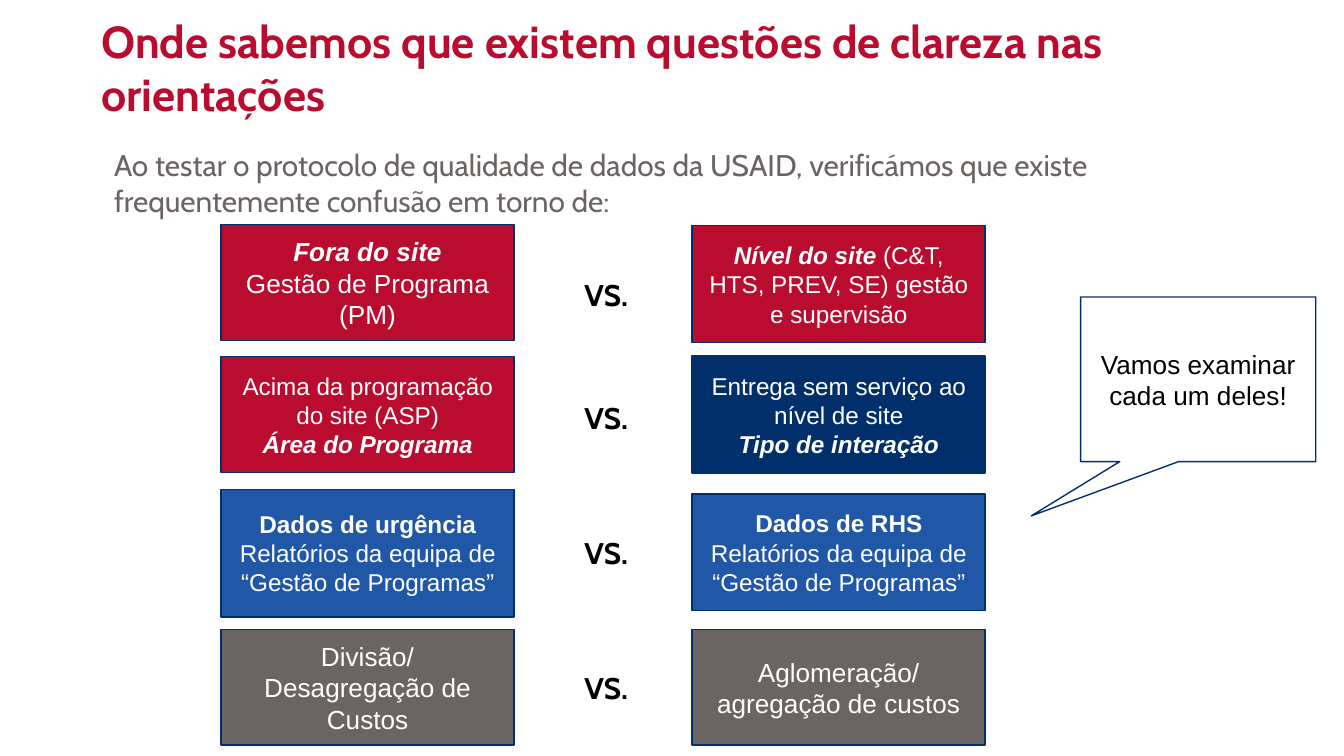
import pptx
import pptx.dml.color
import pptx.enum.shapes
import pptx.enum.text
import pptx.util

SCALE = 4572  # EMU per px, 200 px to the inch
COLORS = {
    "red": "BA0C2F",
    "navy": "002F6C",
    "blue": "2057A7",
    "gray": "6C6463",
    "white": "FFFFFF",
    "black": "000000",
}
SHAPES = pptx.enum.shapes.MSO_SHAPE
ALIGN = pptx.enum.text.PP_ALIGN
ANCHOR = pptx.enum.text.MSO_ANCHOR
BREAK = ("\n", "")

LEFT_X, VERSUS_X, RIGHT_X, BOX_WIDTH = 329, 850, 1030, 436

# Each box: top, height, fill, text size, paragraphs of (text, style) runs
LEFT_BOXES = [
    (334, 173, "red", 14, [[("Fora do site", "bi"), BREAK,
                            ("Gestão de Programa (PM)", "")]]),
    (531, 172, "red", 13, [[("Acima da programação do site (ASP)", ""), BREAK,
                            ("Área do Programa", "bi")]]),
    (728, 190, "blue", 13, [[("Dados de urgência ", "b"),
                             ("Relatórios da equipa de “Gestão de Programas”", "")]]),
    (937, 172, "gray", 14, [[("Divisão/ Desagregação de Custos", "")]]),
]
RIGHT_BOXES = [
    (336, 174, "red", 13, [[("Nível do site ", "bi"),
                            ("(C&T, HTS, PREV, SE) gestão e supervisão", "")]]),
    (530, 174, "navy", 13, [[("Entrega sem serviço ao nível de site", "")],
                            [("Tipo de interação", "bi")]]),
    (735, 174, "blue", 13, [[("Dados de RHS ", "b"),
                             ("Relatórios da equipa de “Gestão de Programas”", "")]]),
    (937, 172, "gray", 14, [[("Aglomeração/", ""), BREAK,
                             ("agregação de custos", "")]]),
]
VERSUS_TOPS = [392, 575, 776, 976]


def px(length):
    return pptx.util.Emu(length * SCALE)


def rgb(name):
    return pptx.dml.color.RGBColor.from_string(COLORS[name])


def write_text(box, paragraphs, size, font, color, align=ALIGN.LEFT, anchor=ANCHOR.TOP):
    frame = box.text_frame
    frame.auto_size = pptx.enum.text.MSO_AUTO_SIZE.NONE
    frame.word_wrap = True
    frame.vertical_anchor = anchor
    frame.margin_left = frame.margin_right = px(20)
    frame.margin_top = frame.margin_bottom = px(20)
    for index, runs in enumerate(paragraphs):
        para = frame.add_paragraph() if index else frame.paragraphs[0]
        para.alignment = align
        for text, style in runs:
            if text == "\n":
                para.add_line_break()
                continue
            span = para.add_run()
            span.text = text
            span.font.name = font
            span.font.size = pptx.util.Pt(size)
            span.font.bold = "b" in style
            span.font.italic = "i" in style
            span.font.color.rgb = rgb(color)


def add_title(page, text):
    title = page.shapes.title
    title.left, title.top, title.width, title.height = map(px, (131, 100, 1766, 100))
    write_text(title, [[(text, "b")]], 24, "Cabin", "red", anchor=ANCHOR.BOTTOM)


def add_label(page, place, text, style, color):
    box = page.shapes.add_textbox(*map(px, place))
    write_text(box, [[(text, style)]], 16, "Cabin", color)
    return box


def add_box(page, kind, place, fill, paragraphs, size, color):
    box = page.shapes.add_shape(kind, *map(px, place))
    box.shadow.inherit = False
    box.fill.solid()
    box.fill.fore_color.rgb = rgb(fill)
    box.line.color.rgb = rgb("navy")
    box.line.width = pptx.util.Pt(0.75)
    write_text(box, paragraphs, size, "Arial", color, ALIGN.CENTER, ANCHOR.MIDDLE)
    return box


def main():
    deck = pptx.Presentation()
    deck.slide_width, deck.slide_height = px(2000), px(1125)
    page = deck.slides.add_slide(deck.slide_layouts[5])

    # Heading and introduction
    add_title(page, "Onde sabemos que existem questões de clareza nas orientações")
    intro = add_label(page, (150, 198, 1658, 100),
                      "Ao testar o protocolo de qualidade de dados da USAID, "
                      "verificámos que existe frequentemente confusão em torno de:",
                      "", "gray")
    intro.text_frame.paragraphs[0].space_after = pptx.util.Pt(8)

    # Compared pairs
    for left, boxes in ((LEFT_X, LEFT_BOXES), (RIGHT_X, RIGHT_BOXES)):
        for top, height, fill, size, paragraphs in boxes:
            add_box(page, SHAPES.RECTANGLE, (left, top, BOX_WIDTH, height),
                    fill, paragraphs, size, "white")
    for top in VERSUS_TOPS:
        add_label(page, (VERSUS_X, top, 112, 94), "VS.", "b", "black")

    # Speech bubble with square corners
    bubble = add_box(page, SHAPES.ROUNDED_RECTANGULAR_CALLOUT, (1608, 442, 350, 245),
                     "white", [[("Vamos examinar cada um deles!", "")]], 14, "black")
    for index, value in enumerate((-0.71, 0.83, 0)):
        bubble.adjustments[index] = value

    deck.save("out.pptx")


if __name__ == "__main__":
    main()
